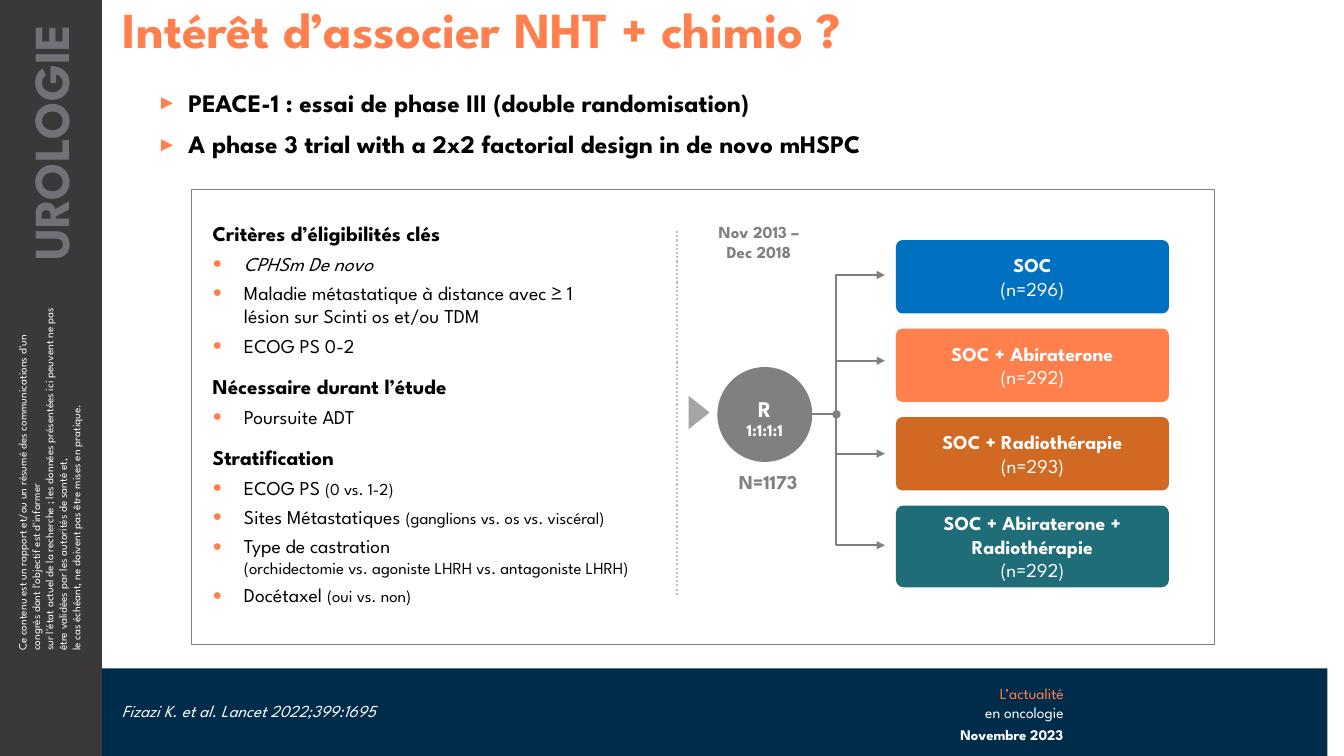
import lxml.etree
import pptx
import pptx.dml.color
import pptx.enum.dml
import pptx.enum.shapes
import pptx.enum.text
import pptx.oxml.ns
import pptx.util

Cm = pptx.util.Cm
Pt = pptx.util.Pt
qn = pptx.oxml.ns.qn
SHAPE = pptx.enum.shapes.MSO_SHAPE
ALIGN = pptx.enum.text.PP_ALIGN
ANCHOR = pptx.enum.text.MSO_ANCHOR
FONT = "League Spartan"
COLORS = {
    "navy": "002C4C", "charcoal": "3A3839", "slate": "737078", "white": "FFFFFF",
    "black": "000000", "coral": "FF7F4D", "gray": "808080", "silver": "A5A5A5",
    "dots": "BFBFBF", "blue": "0070C0", "rust": "D16923", "teal": "1E6D78",
}
EDGES = (0.2, 0.2, 0.2, 0.2)


def rgb(name):
    """Return the named colour."""
    return pptx.dml.color.RGBColor.from_string(COLORS[name])


def sub(parent, tag, **attrs):
    """Append a drawing element with its attributes."""
    return lxml.etree.SubElement(parent, qn("a:" + tag), **attrs)


def add_bullet(p, char):
    """Give a paragraph a hanging coral bullet."""
    pPr = p._p.get_or_add_pPr()
    pPr.set("marL", str(Cm(0.79)))
    pPr.set("indent", str(Cm(-0.79)))
    sub(sub(pPr, "buClr"), "srgbClr", val=COLORS["coral"])
    sub(pPr, "buSzPct", val="80000")
    sub(pPr, "buFont", typeface="Arial")
    sub(pPr, "buChar", char=char)


def add_runs(p, runs):
    """Add (text, size, colour, style) runs, breaking lines at newlines."""
    for text, size, color, style in runs:
        for i, line in enumerate(text.split("\n")):
            if i:
                p.add_line_break()
            if line:
                r = p.add_run()
                r.text = line
                r.font.name, r.font.size = FONT, Pt(size)
                r.font.color.rgb = rgb(color)
                r.font.bold, r.font.italic = "b" in style, "i" in style


def write(sp, paragraphs, align=ALIGN.LEFT, anchor=ANCHOR.TOP,
          insets=(0.25, 0.13, 0.25, 0.13), spacing=None):
    """Fill a shape with (runs, space before, bullet) paragraphs."""
    tf = sp.text_frame
    tf.word_wrap = True
    tf.vertical_anchor = anchor
    tf.margin_left, tf.margin_top, tf.margin_right, tf.margin_bottom = map(Cm, insets)
    for i, (runs, before, bullet) in enumerate(paragraphs):
        p = tf.add_paragraph() if i else tf.paragraphs[0]
        if bullet:
            add_bullet(p, bullet)
        p.alignment = align
        p.space_before = Pt(before if i else 0)
        if spacing:
            p.line_spacing = spacing
        add_runs(p, runs)


def add_text(s, box, runs, rotation=0, **layout):
    """Add a text box holding one paragraph."""
    sp = s.shapes.add_textbox(*map(Cm, box))
    sp.rotation = rotation
    write(sp, [(runs, 0, None)], **layout)


def add_shape(s, kind, box, fill=None, line=None, width=0.75):
    """Add a flat preset shape."""
    sp = s.shapes.add_shape(kind, *map(Cm, box))
    sp.shadow.inherit = False
    if fill:
        sp.fill.solid()
        sp.fill.fore_color.rgb = rgb(fill)
    else:
        sp.fill.background()
    if line:
        sp.line.color.rgb = rgb(line)
        sp.line.width = Pt(width)
    else:
        sp.line.fill.background()
    return sp


def add_end(sp, end, kind):
    """Put an arrowhead on one end of a line."""
    sub(sp._element.spPr.find(qn("a:ln")), end, type=kind)


def add_line(s, x1, y1, x2, y2, color, tail=None):
    """Add a straight line with an optional end mark."""
    sp = s.shapes.add_connector(pptx.enum.shapes.MSO_CONNECTOR.STRAIGHT,
                                Cm(x1), Cm(y1), Cm(x2), Cm(y2))
    sp.line.color.rgb = rgb(color)
    sp.line.width = Pt(1.5)
    if tail:
        add_end(sp, "tailEnd", tail)
    sub(sp._element.spPr, "effectLst")
    return sp


def sidebar(s, x, y, w, h):
    """Draw the side band with its specialty and disclaimer."""
    add_shape(s, SHAPE.RECTANGLE, (x, y, w, h), "charcoal")
    disclaimer = (
        "Ce contenu est un rapport et/ou un résumé des communications d'un congrès "
        "dont l'objectif est d'informer\nsur l'état actuel de la recherche ; les données "
        "présentées ici peuvent ne pas être validées par les autorités de santé et,\n"
        "le cas échéant, ne doivent pas être mises en pratique.")
    add_text(s, (x - 3.33, y + 11.1, 9.14, 1.96), [(disclaimer, 8, "white", "")], 270)
    add_text(s, (x - 2.64, y + 3, 7.8, 1.8), [("UROLOGIE", 36, "slate", "b")], 270,
             align=ALIGN.RIGHT, insets=(0.25, 0.13, 0.61, 0.13))


def footer(s, x, y, w, h):
    """Draw the bottom band with the citation and issue."""
    add_shape(s, SHAPE.RECTANGLE, (x, y, w, h), "navy")
    add_text(s, (x + 0.66, y, 14.33, h),
             [("Fizazi K. et al. Lancet 2022;399:1695", 12, "white", "i")],
             anchor=ANCHOR.MIDDLE, spacing=0.9)
    add_text(s, (x + 20.73, y + 0.28, 4.17, 1.19),
             [("L’actualité\n", 11, "coral", ""), ("en oncologie", 11, "white", "")],
             align=ALIGN.RIGHT)
    add_text(s, (x + 20.73, y + 1.37, 3.91, 0.69), [("Novembre 2023", 10.5, "white", "b")],
             align=ALIGN.RIGHT, insets=(0.25, 0.13, 0, 0.13), spacing=0.9)


def heading(s, x, y, w, h):
    """Place the title and the two introductory points."""
    add_text(s, (x, y, w, 1.45), [("Intérêt d’associer NHT + chimio ?", 36, "coral", "b")],
             insets=(0.51, 0.13, 0.25, 0.13), spacing=0.9)
    points = ("PEACE-1 : essai de phase III (double randomisation)",
              "A phase 3 trial with a 2x2 factorial design in de novo mHSPC")
    sp = s.shapes.add_textbox(Cm(x + 1.12), Cm(y + 2.16), Cm(26.87), Cm(h - 2.16))
    write(sp, [([(text, 18, "black", "b")], 10, "►") for text in points], spacing=0.9)


def criteria(s, x, y, w, h):
    """List the eligibility, treatment and stratification criteria."""
    sections = [
        ("Critères d’éligibilités clés", [
            ("CPHSm De novo", "", "i"),
            ("Maladie métastatique à distance avec ≥ 1\nlésion sur Scinti os et/ou TDM", "", ""),
            ("ECOG PS 0-2", "", "")]),
        ("Nécessaire durant l’étude", [("Poursuite ADT", "", "")]),
        ("Stratification", [
            ("ECOG PS ", "(0 vs. 1-2)", ""),
            ("Sites Métastatiques ", "(ganglions vs. os vs. viscéral)", ""),
            ("Type de castration\n", "(orchidectomie vs. agoniste LHRH vs. antagoniste LHRH)", ""),
            ("Docétaxel ", "(oui vs. non)", "")]),
    ]
    paragraphs = []
    for title, items in sections:
        paragraphs.append(([(title, 15, "black", "b")], 12, None))
        for text, detail, style in items:
            runs = [(text, 14, "black", style), (detail, 12, "black", style)]
            paragraphs.append((runs, 4, "●"))
    sp = s.shapes.add_textbox(*map(Cm, (x, y, w, h)))
    write(sp, paragraphs, anchor=ANCHOR.MIDDLE, insets=EDGES)


def randomisation(s, x, y, w, h):
    """Draw the divider, randomisation node and branching arrows."""
    divider = add_line(s, x, y + h, x, y + 0.51, "dots")
    divider.line.dash_style = pptx.enum.dml.MSO_LINE.ROUND_DOT
    add_shape(s, SHAPE.ISOSCELES_TRIANGLE, (x + 0.13, y + 4.85, 0.84, 0.53), "silver").rotation = 90
    labels = [((x + 0.1, y, 3.91, 1.45), "Nov 2013 –\nDec 2018", 12),
              ((x + 1.35, y + 6.25, 1.88, 1.04), "N=1173", 14)]
    for box, text, size in labels:
        sp = add_shape(s, SHAPE.RECTANGLE, box, "white")
        write(sp, [([(text, size, "gray", "b")], 0, None)], ALIGN.CENTER, ANCHOR.MIDDLE,
              (0, 0.3, 0, 0.13))
    fork, tip = x + 4.01, x + w
    bracket = add_shape(s, SHAPE.LEFT_BRACKET, (fork, y + 1.65, tip - fork, 6.81),
                        line="gray", width=1.5)
    bracket.adjustments[0] = 0
    add_end(bracket, "headEnd", "triangle")
    add_end(bracket, "tailEnd", "triangle")
    for dy in (3.81, 6.15):
        add_line(s, fork, y + dy, tip, y + dy, "gray", "triangle")
    add_line(s, x + 2.46, y + 5.16, fork, y + 5.16, "gray", "oval")
    node = add_shape(s, SHAPE.OVAL, (x + 1.01, y + 3.97, 2.39, 2.39), "gray")
    write(node, [([("R\n", 16, "white", "b"), ("1:1:1:1", 12, "white", "b")], 0, None)],
          ALIGN.CENTER, ANCHOR.BOTTOM, (0.03, 0.2, 0.03, 0.2), Pt(13))


def arms(s, x, y, w, h):
    """Stack the four treatment arms."""
    groups = [("SOC", 296, "blue", 1.85), ("SOC + Abiraterone", 292, "coral", 1.85),
              ("SOC + Radiothérapie", 293, "rust", 1.85),
              ("SOC + Abiraterone + Radiothérapie", 292, "teal", 2.06)]
    pitch = (h - groups[-1][3]) / (len(groups) - 1)
    for i, (name, n, color, height) in enumerate(groups):
        sp = add_shape(s, SHAPE.ROUNDED_RECTANGLE, (x, y + i * pitch, w, height), color)
        sp.adjustments[0] = 0.09
        runs = [(name + "\n", 14, "white", "b"), (f"(n={n})", 14, "white", "")]
        write(sp, [(runs, 0, None)], ALIGN.CENTER, ANCHOR.MIDDLE, EDGES)


def trial_panel(s, x, y, w, h):
    """Frame the trial design and place its three columns."""
    frame = add_shape(s, SHAPE.ROUNDED_RECTANGLE, (x, y, w, h), line="gray")
    frame.adjustments[0] = 0
    criteria(s, x + 0.33, y + 0.81, 11.73, 9.68)
    randomisation(s, x + 12.24, y + 0.5, 5.23, 9.71)
    arms(s, x + 17.75, y + 1.27, 6.88, 8.75)


def main():
    """Build the slide and save it."""
    prs = pptx.Presentation()
    prs.slide_width, prs.slide_height = Cm(33.87), Cm(19.05)
    s = prs.slides.add_slide(prs.slide_layouts[6])
    footer(s, 2.16, 16.84, 31.29, 2.21)
    sidebar(s, 0, 0, 2.57, 19.05)
    heading(s, 2.59, 0, 31.27, 4.42)
    trial_panel(s, 4.83, 4.78, 25.78, 11.46)
    prs.save("out.pptx")


if __name__ == "__main__":
    main()
